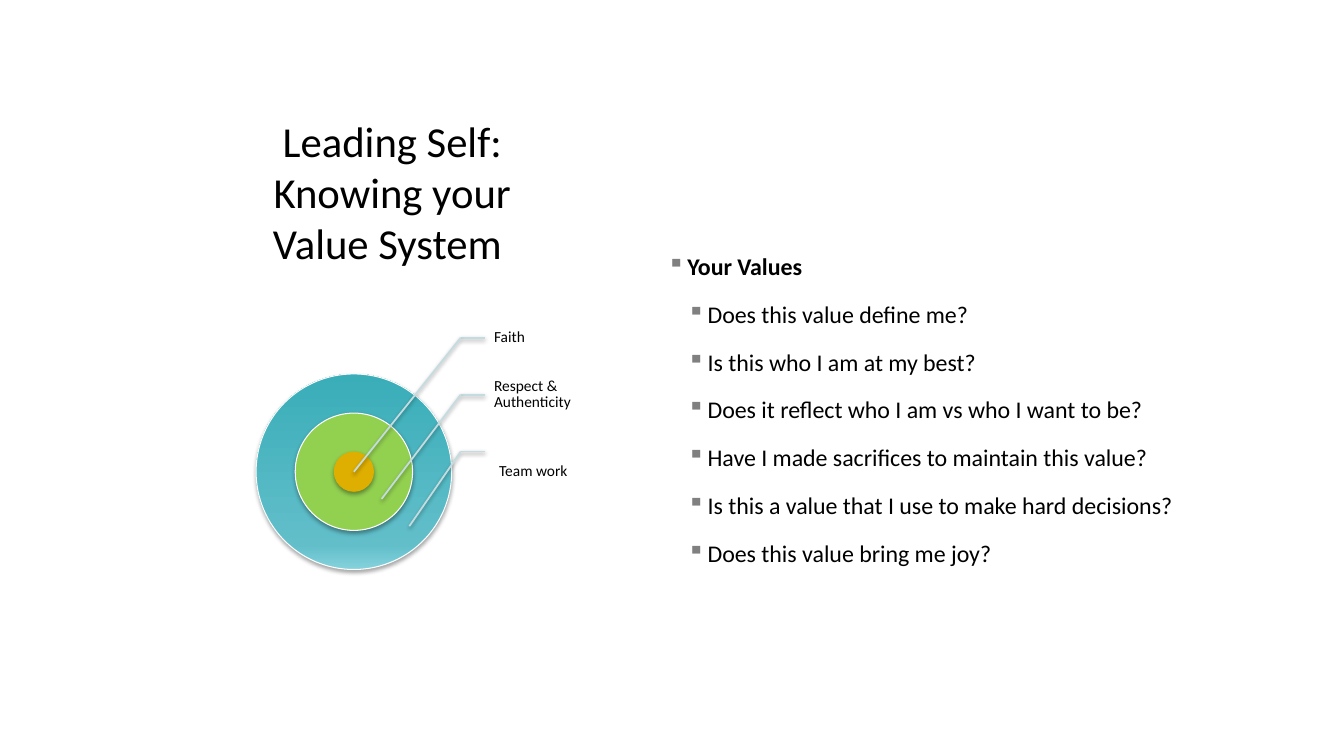
from lxml import etree
from pptx import Presentation
from pptx.dml.color import RGBColor
from pptx.enum.shapes import MSO_CONNECTOR, MSO_SHAPE
from pptx.enum.text import MSO_ANCHOR, PP_ALIGN
from pptx.oxml.ns import qn
from pptx.util import Emu, Pt

MIDDLE = MSO_ANCHOR.MIDDLE
CENTER = PP_ALIGN.CENTER
LEFT = PP_ALIGN.LEFT
OVAL = MSO_SHAPE.OVAL
STRAIGHT = MSO_CONNECTOR.STRAIGHT

SCALE = 9144
FONT = "Calibri"
BLACK = "000000"
WHITE = "FFFFFF"
LEADER = "C4DCE0"
BULLET = "808080"
GOLD = "DEAE00"
TEAL_STOPS = [(0, "85D2DC"), (12, "62BFCA"), (100, "39ADB8")]

TITLE = "Leading Self:\nKnowing your Value System "
HEADING = "Your Values"
QUESTIONS = [
    "Does this value define me?",
    "Is this who I am at my best?",
    "Does it reflect who I am vs who I want to be?",
    "Have I made sacrifices to maintain this value?",
    "Is this a value that I use to make hard decisions?",
    "Does this value bring me joy?",
]
RINGS = [(5, TEAL_STOPS, WHITE), (3, "92D050", WHITE), (1, GOLD, GOLD)]
LABELS = [
    ("Faith", (227, 0, 97, 57)),
    ("Respect & Authenticity", (227, 57, 97, 57)),
    ("Team work", (232, 120, 113, 83)),
]


def px(length):
    return Emu(round(length * SCALE))


def color(value):
    return RGBColor.from_string(value)


def add_child(parent, tag, **attributes):
    return etree.SubElement(parent, qn(tag), attributes)


def add_shadow(shape, opacity, distance):
    effects = add_child(shape._element.spPr, "a:effectLst")
    shadow = add_child(effects, "a:outerShdw", blurRad=str(Pt(3.1)),
                       dist=str(Pt(distance)), dir="5400000", rotWithShape="0")
    tint = add_child(shadow, "a:srgbClr", val=BLACK)
    add_child(tint, "a:alpha", val=str(opacity * 1000))


def fill_gradient(shape, stops):
    shape.fill.gradient()
    shape.fill.gradient_angle = 90
    stop_list = shape._element.spPr.find(qn("a:gradFill")).find(qn("a:gsLst"))
    for stop in list(stop_list):
        stop_list.remove(stop)
    for position, value in stops:
        stop = add_child(stop_list, "a:gs", pos=str(position * 1000))
        add_child(stop, "a:srgbClr", val=value)


def add_frame(page, box):
    frame = page.shapes.add_textbox(*map(px, box)).text_frame
    frame.word_wrap = True
    frame.vertical_anchor = MIDDLE
    return frame


def write(para, text, size, align=LEFT, bold=False):
    para.text = text
    para.alignment = align
    for span in para.runs:
        span.font.name = FONT
        span.font.size = Pt(size)
        span.font.bold = bold
        span.font.color.rgb = color(BLACK)


def add_title(page, box):
    write(add_frame(page, box).paragraphs[0], TITLE, 30.5, CENTER)


def add_questions(page, box):
    frame = add_frame(page, box)
    for index, text in enumerate([HEADING] + QUESTIONS):
        para = frame.add_paragraph() if index else frame.paragraphs[0]
        write(para, text, 17.1, bold=index == 0)
        para.level = 1 if index else 0
        para.line_spacing = 1.5
        para.space_before = Pt(3.4)
        properties = para._p.get_or_add_pPr()
        properties.set("marL", str(px(65 if index else 45)))
        properties.set("indent", str(px(-20)))
        tint = add_child(properties, "a:buClr")
        add_child(tint, "a:srgbClr", val=BULLET)
        add_child(properties, "a:buChar", char="▪")


def add_ring(page, center_x, center_y, diameter, fill, outline):
    ring = page.shapes.add_shape(OVAL, px(center_x - diameter / 2),
                                 px(center_y - diameter / 2),
                                 px(diameter), px(diameter))
    if isinstance(fill, list):
        fill_gradient(ring, fill)
    else:
        ring.fill.solid()
        ring.fill.fore_color.rgb = color(fill)
    ring.line.color.rgb = color(outline)
    ring.line.width = Pt(0.75)
    add_shadow(ring, 35, 1.8)


def add_leader(page, start, end):
    leader = page.shapes.add_connector(STRAIGHT, *map(px, start + end))
    leader.line.color.rgb = color(LEADER)
    leader.line.width = Pt(1.25)
    add_shadow(leader, 38, 1.6)


def add_label(page, box, text):
    frame = add_frame(page, box)
    frame.margin_left = px(9)
    frame.margin_top = frame.margin_right = frame.margin_bottom = px(2)
    para = frame.paragraphs[0]
    write(para, text, 11)
    para.line_spacing = 0.9


def add_target(page, box):
    left, top, width, height = box
    diameter = height - 65
    center_x = left + diameter / 2
    center_y = top + height - diameter / 2
    for share, fill, outline in RINGS:
        add_ring(page, center_x, center_y, diameter * share / 5, fill, outline)
    for index, (text, (x, y, label_width, label_height)) in enumerate(LABELS):
        elbow = (left + 203, top + 29 + 56.5 * index)
        tip = (center_x + 27.5 * index, center_y + 27 * index)
        add_label(page, (left + x, top + y, label_width, label_height), text)
        add_leader(page, elbow, (left + 227, elbow[1]))
        add_leader(page, elbow, tip)


def main():
    deck = Presentation()
    deck.slide_width = px(1333)
    deck.slide_height = px(750)
    page = deck.slides.add_slide(deck.slide_layouts[6])
    add_title(page, (238, 97, 302, 186))
    add_questions(page, (627, 97, 611, 604))
    add_target(page, (254, 306, 345, 259))
    deck.save("out.pptx")


if __name__ == "__main__":
    main()
